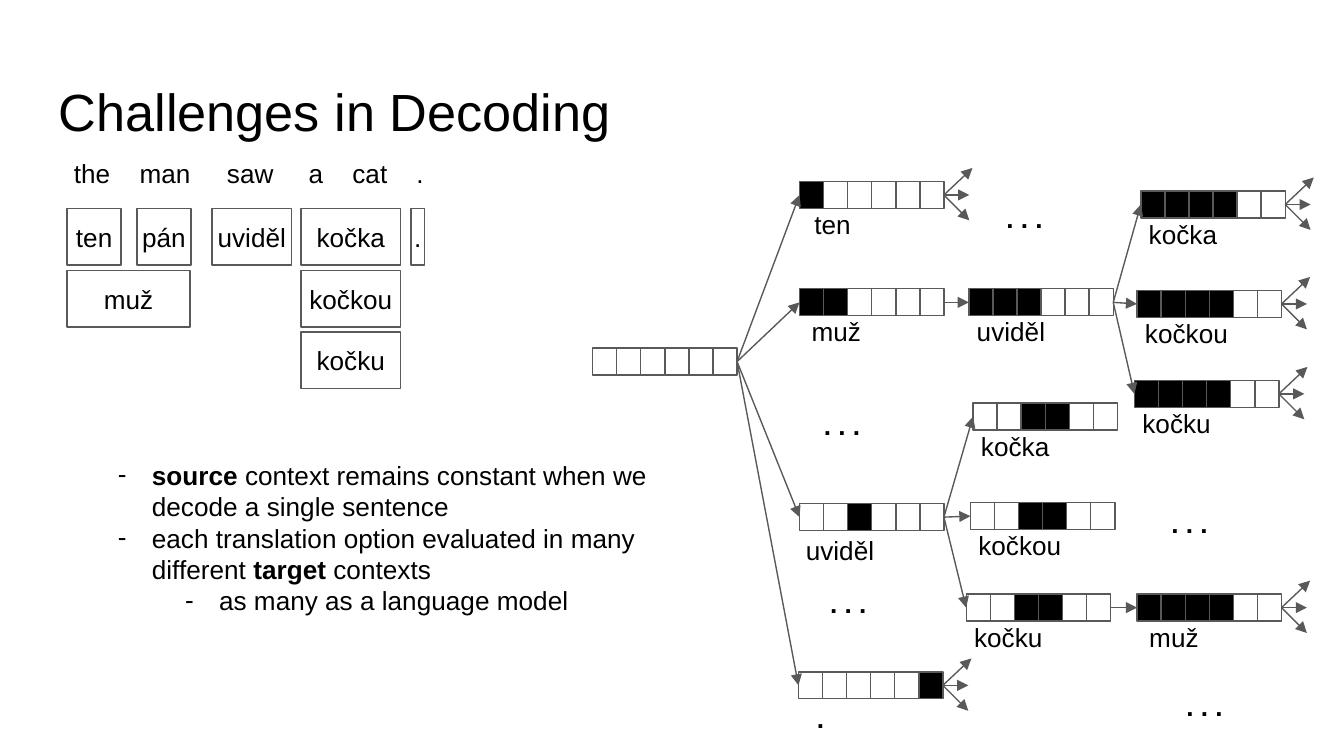
from lxml import etree
from pptx import Presentation
from pptx.dml.color import RGBColor
from pptx.enum import shapes, text
from pptx.oxml import ns
from pptx.util import Cm, Pt

FONT, BLACK, GREY = "Arial", "000000", "595959"
BAR_W, BAR_H, CELLS = 2.73, 0.51, 6
INSET = 0.25


def color(value):
    return RGBColor.from_string(value)


def place(sp, x, y, w, h):
    sp.left, sp.top, sp.width, sp.height = Cm(x), Cm(y), Cm(w), Cm(h)


def add_run(p, content, size=14, bold=False):
    r = p.add_run()
    r.text = content
    r.font.name, r.font.size, r.font.bold = FONT, Pt(size), bold
    r.font.color.rgb = color(BLACK)


def set_frame(tf, inset, anchor=text.MSO_ANCHOR.TOP):
    tf.word_wrap = True
    tf.auto_size = text.MSO_AUTO_SIZE.NONE
    tf.vertical_anchor = anchor
    tf.margin_left = tf.margin_right = Cm(inset)
    tf.margin_top = tf.margin_bottom = Cm(inset)


def add_centered(sp, content):
    set_frame(sp.text_frame, 0, text.MSO_ANCHOR.MIDDLE)
    p = sp.text_frame.paragraphs[0]
    p.alignment = text.PP_ALIGN.CENTER
    add_run(p, content)


def add_label(slide, x, y, content, bold=False):
    sp = slide.shapes.add_textbox(Cm(x), Cm(y), Cm(2.5), Cm(0.76))
    set_frame(sp.text_frame, INSET)
    add_run(sp.text_frame.paragraphs[0], content, bold=bold)


def add_rect(slide, x, y, w, h, fill=None):
    sp = slide.shapes.add_shape(shapes.MSO_SHAPE.RECTANGLE, Cm(x), Cm(y), Cm(w), Cm(h))
    sp.shadow.inherit = False
    if fill:
        sp.fill.solid()
        sp.fill.fore_color.rgb = color(fill)
    else:
        sp.fill.background()
    sp.line.color.rgb = color(GREY)
    sp.line.width = Pt(0.75)
    return sp


def add_arrow(slide, source, target=None, tip=(0, 0)):
    """Arrow from a cell's right side to a target cell's left side or a tip offset."""
    x, y = source.left + source.width, source.top + source.height // 2
    line = slide.shapes.add_connector(
        shapes.MSO_CONNECTOR.STRAIGHT, x, y, x + Cm(tip[0]), y + Cm(tip[1]))
    line.begin_connect(source, 3)
    if target is not None:
        line.end_connect(target, 1)
    line.line.color.rgb = color(GREY)
    line.line.width = Pt(0.75)
    etree.SubElement(line.line._get_or_add_ln(), ns.qn("a:tailEnd"), type="triangle")
    etree.SubElement(line._element.spPr, ns.qn("a:effectLst"))


def add_bar(slide, x, y, covered):
    """Coverage vector; returns its first and last cells."""
    step = BAR_W / CELLS
    cells = [add_rect(slide, x + i * step, y, step, BAR_H, BLACK if i in covered else None)
             for i in range(CELLS)]
    return cells[0], cells[-1]


def add_title(slide, x, y, w, h):
    sp = slide.shapes.title
    place(sp, x, y, w, h)
    set_frame(sp.text_frame, INSET)
    p = sp.text_frame.paragraphs[0]
    p.alignment = text.PP_ALIGN.LEFT
    add_run(p, "Challenges in Decoding", 28)


def add_options(slide, x, y):
    # Source words
    words = [("the", 0.47), ("man", 1.85), ("saw", 3.46), ("a", 4.7), ("cat", 5.72), (".", 6.67)]
    for word, center in words:
        sp = slide.shapes.add_textbox(Cm(x + center - 0.6), Cm(y), Cm(1.2), Cm(1.16))
        add_centered(sp, word)
    # Translation options: text, row, left, width
    options = [
        ("ten", 0, 0, 1.02), ("pán", 0, 1.32, 1.02), ("uviděl", 0, 2.74, 1.5),
        ("kočka", 0, 4.42, 1.88), (".", 0, 6.5, 0.25),
        ("muž", 1, 0, 2.32), ("kočkou", 1, 4.42, 1.88), ("kočku", 2, 4.42, 1.88),
    ]
    for word, row, left, width in options:
        add_centered(add_rect(slide, x + left, y + 1.25 + row * 1.17, width, 1.07), word)


def add_search_tree(slide, x, y):
    # Hypotheses: left, top, covered cells, parent, label, label offset, fans out
    near, below = (-0.1, 0.26), (-0.13, 0.33)
    hypotheses = {
        "start": (0, 3.38, (), None, None, None, False),
        "ten": (3.91, 0.23, (0,), "start", "ten", (0.03, 0.26), True),
        "muž": (3.91, 2.26, (0, 1), "start", "muž", (-0.02, 0.26), False),
        "uviděl": (3.91, 6.32, (2,), "start", "uviděl", below, False),
        "period": (3.89, 9.5, (5,), "start", None, None, True),
        "muž uviděl": (7.11, 2.26, (0, 1, 2), "muž", "uviděl", near, False),
        "muž kočka": (10.36, 0.41, (0, 1, 2, 3), "muž uviděl", "kočka", near, True),
        "muž kočkou": (10.29, 2.29, (0, 1, 2, 3), "muž uviděl", "kočkou", near, True),
        "muž kočku": (10.24, 3.99, (0, 1, 2, 3), "muž uviděl", "kočku", near, True),
        "uviděl kočka": (7.19, 4.42, (2, 3), "uviděl", "kočka", near, False),
        "uviděl kočkou": (7.14, 6.3, (2, 3), "uviděl", "kočkou", near, False),
        "uviděl kočku": (7.06, 8.03, (2, 3), "uviděl", "kočku", near, False),
        "kočku muž": (10.29, 8.03, (0, 1, 2, 3), "uviděl kočku", "muž", (-0.02, 0.26), True),
    }
    ends = {}
    for name, (left, top, covered, parent, label, offset, fans) in hypotheses.items():
        first, ends[name] = add_bar(slide, x + left, y + top, covered)
        if parent:
            add_arrow(slide, ends[parent], first)
        if label:
            add_label(slide, x + left + offset[0], y + top + offset[1], label)
        if fans:
            for tip in ((0.48, 0), (0.48, 0.48), (0.54, -0.51)):
                add_arrow(slide, ends[name], tip=tip)
    # Omitted hypotheses
    for left, top in ((7.57, 0.38), (4.12, 4.29), (4.24, 7.65), (10.69, 6.15), (10.97, 9.6)):
        add_label(slide, x + left, y + top, ". . .", bold=True)
    add_label(slide, x + 3.99, y + 9.83, ".", bold=True)


def add_notes_list(slide, x, y, w, h):
    sp = slide.placeholders[1]
    place(sp, x, y, w, h)
    tf = sp.text_frame
    set_frame(tf, INSET)
    items = [
        (0, [("source", True), (" context remains constant when we decode a single sentence", False)]),
        (0, [("each translation option evaluated in many different ", False),
             ("target", True), (" contexts", False)]),
        (1, [("as many as a language model", False)]),
    ]
    for i, (level, runs) in enumerate(items):
        p = tf.add_paragraph() if i else tf.paragraphs[0]
        p.level = level
        p.space_before = Pt(0)
        pPr = p._p.get_or_add_pPr()
        pPr.set("marL", str(Cm(1.27 * (level + 1))))
        pPr.set("indent", str(Cm(-0.64)))
        etree.SubElement(pPr, ns.qn("a:buChar"), char="-")
        for content, bold in runs:
            add_run(p, content, bold=bold)


def main():
    prs = Presentation()
    prs.slide_width, prs.slide_height = Cm(25.4), Cm(14.29)
    slide = prs.slides.add_slide(prs.slide_layouts[1])
    add_title(slide, 0.86, 1.24, 23.67, 1.6)
    add_search_tree(slide, 11.2, 3.2)
    add_options(slide, 1.27, 2.69)
    add_notes_list(slide, 1.35, 8.43, 11.43, 6.3)
    prs.save("out.pptx")


if __name__ == "__main__":
    main()
